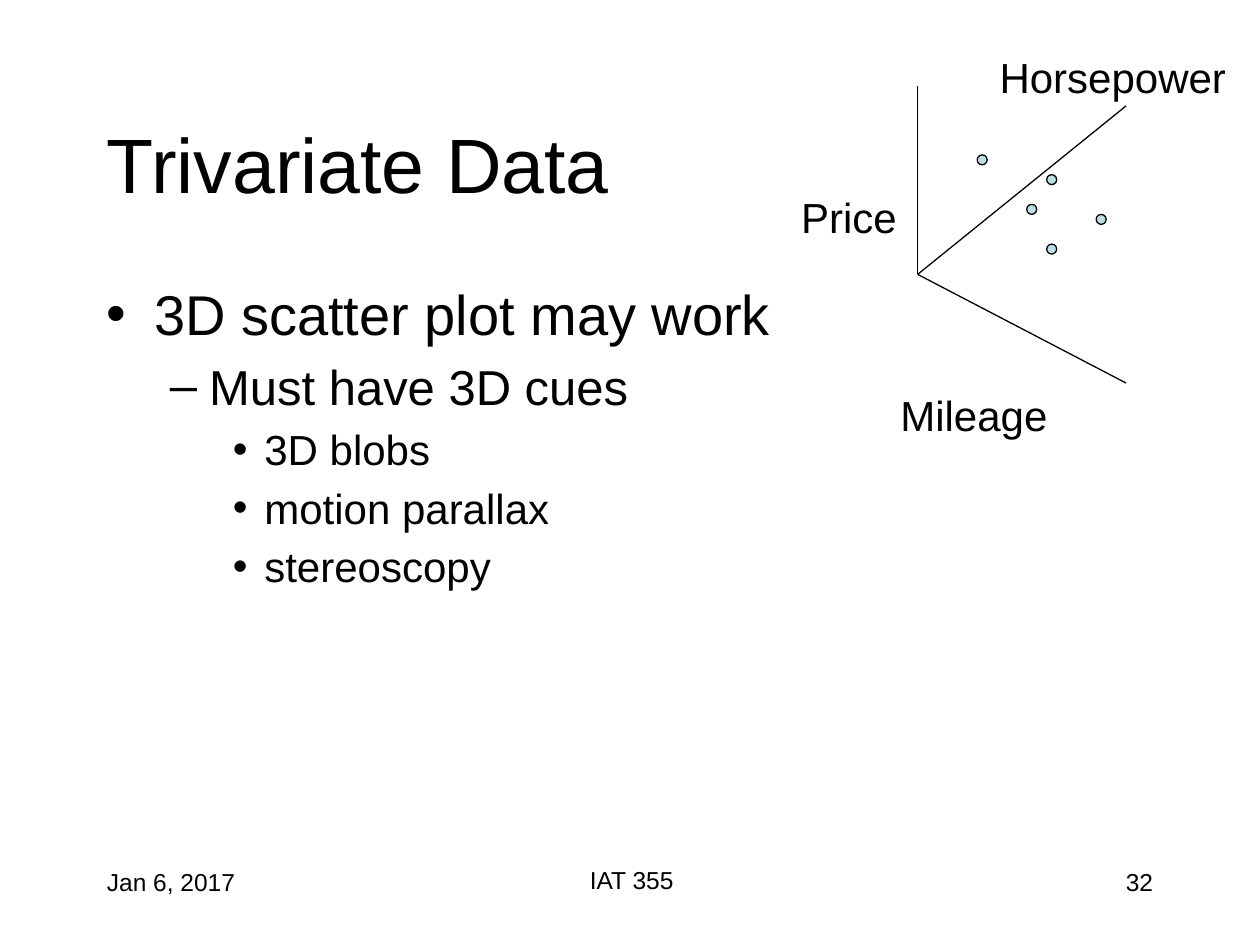
from lxml import etree
from pptx import Presentation
from pptx.dml.color import RGBColor
from pptx.enum.shapes import MSO_CONNECTOR, MSO_SHAPE
from pptx.enum.text import MSO_ANCHOR, MSO_AUTO_SIZE, PP_ALIGN
from pptx.oxml.ns import qn
from pptx.util import Pt

LEFT, CENTER, RIGHT = PP_ALIGN.LEFT, PP_ALIGN.CENTER, PP_ALIGN.RIGHT
TOP, MIDDLE = MSO_ANCHOR.TOP, MSO_ANCHOR.MIDDLE
FIT_SHAPE = MSO_AUTO_SIZE.SHAPE_TO_FIT_TEXT
STRAIGHT, OVAL = MSO_CONNECTOR.STRAIGHT, MSO_SHAPE.OVAL

BLACK = RGBColor(0x00, 0x00, 0x00)
PALE_TEAL = RGBColor(0xBB, 0xE0, 0xE3)
FONT = "Arial"
LINE_WIDTH = 0.75
DOT_SIZE = 5.7

LEVELS = [
    {"size": 32, "indent": 27, "hanging": 27, "bullet": "•"},
    {"size": 28, "indent": 58.5, "hanging": 22.5, "bullet": "–"},
    {"size": 24, "indent": 90, "hanging": 18, "bullet": "•"},
]
OUTLINE = [
    (0, "3D scatter plot may work"),
    (1, "Must have 3D cues"),
    (2, "3D blobs"),
    (2, "motion parallax"),
    (2, "stereoscopy"),
]
ORIGIN = (524.4, 156.8)
AXIS_ENDS = [(643.5, 218.9), (643.5, 60.5), (524.4, 49)]
DOTS = [(558.4, 88.5), (586.7, 116.8), (598.1, 99.8), (626.4, 122.5), (598.1, 139.5)]
AXIS_LABELS = [
    ("Price", 450.7, 105.9, 69.1),
    ("Mileage", 507.4, 219, 98.6),
    ("Horsepower", 564.1, 26, 144),
]
FOOTERS = [
    ("Jan 6, 2017", 54, 492, 150, LEFT),
    ("IAT 355", 247, 491, 228, CENTER),
    ("32", 516, 492, 150, RIGHT),
]


def style_paragraph(para, size, align=LEFT):
    para.alignment = align
    for span in para.runs:
        span.font.name = FONT
        span.font.size = Pt(size)
        span.font.color.rgb = BLACK


def add_text(page, text, left, top, width, height, size, align=LEFT, anchor=TOP, wrap=True):
    box = page.shapes.add_textbox(Pt(left), Pt(top), Pt(width), Pt(height))
    frame = box.text_frame
    frame.word_wrap = wrap
    frame.vertical_anchor = anchor
    if not wrap:
        frame.auto_size = FIT_SHAPE
    frame.text = text
    for para in frame.paragraphs:
        style_paragraph(para, size, align)
    return box


def set_bullet(para, indent, hanging, bullet):
    properties = para._p.get_or_add_pPr()
    properties.set("marL", str(Pt(indent)))
    properties.set("indent", str(-Pt(hanging)))
    spacing = etree.SubElement(properties, qn("a:spcBef"))
    etree.SubElement(spacing, qn("a:spcPct"), val="20000")
    etree.SubElement(properties, qn("a:buFont"), typeface=FONT)
    etree.SubElement(properties, qn("a:buChar"), char=bullet)


def add_outline(page, items, left, top, width, height):
    text = "\n".join(item for _, item in items)
    box = add_text(page, text, left, top, width, height, LEVELS[0]["size"])
    for para, (level, _) in zip(box.text_frame.paragraphs, items):
        style = LEVELS[level]
        para.level = level
        style_paragraph(para, style["size"])
        set_bullet(para, style["indent"], style["hanging"], style["bullet"])


def add_axis(page, start, end):
    axis = page.shapes.add_connector(STRAIGHT, *map(Pt, start + end))
    axis.line.color.rgb = BLACK
    axis.line.width = Pt(LINE_WIDTH)
    etree.SubElement(axis._element.spPr, qn("a:effectLst"))


def add_dot(page, left, top):
    dot = page.shapes.add_shape(OVAL, Pt(left), Pt(top), Pt(DOT_SIZE), Pt(DOT_SIZE))
    dot.shadow.inherit = False
    dot.fill.solid()
    dot.fill.fore_color.rgb = PALE_TEAL
    dot.line.color.rgb = BLACK
    dot.line.width = Pt(LINE_WIDTH)


def add_scatter_plot(page):
    for end in AXIS_ENDS:
        add_axis(page, ORIGIN, end)
    for left, top in DOTS:
        add_dot(page, left, top)
    for label, left, top, width in AXIS_LABELS:
        add_text(page, label, left, top, width, 36, 24, wrap=False)


def main():
    deck = Presentation()
    deck.slide_width, deck.slide_height = Pt(720), Pt(540)
    page = deck.slides.add_slide(deck.slide_layouts[6])
    for text, left, top, width, align in FOOTERS:
        add_text(page, text, left, top, width, 36, 14, align)
    add_text(page, "Trivariate Data", 54, 48, 612, 90, 44, anchor=MIDDLE)
    add_outline(page, OUTLINE, 54, 156, 612, 324)
    add_scatter_plot(page)
    deck.save("out.pptx")


if __name__ == "__main__":
    main()
